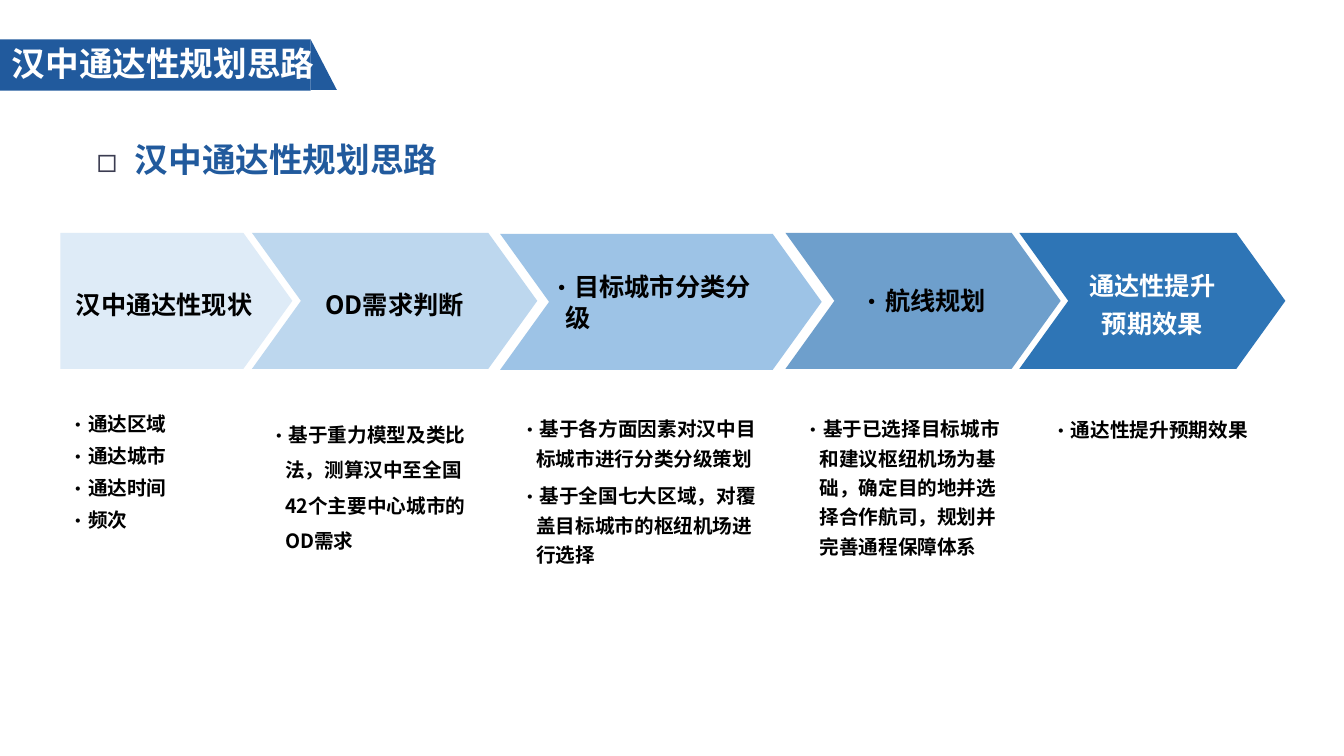
from lxml import etree
from pptx import Presentation
from pptx.dml.color import RGBColor
from pptx.enum.shapes import MSO_SHAPE
from pptx.enum.text import MSO_ANCHOR, MSO_AUTO_SIZE, PP_ALIGN
from pptx.oxml.ns import qn
from pptx.util import Inches, Pt

FONT = "Noto Sans CJK SC"
BLACK = RGBColor(0x00, 0x00, 0x00)
WHITE = RGBColor(0xFF, 0xFF, 0xFF)
NAVY = RGBColor(0x21, 0x5A, 0x9D)
BLUE = RGBColor(0x2E, 0x75, 0xB6)
SKY = RGBColor(0x9D, 0xC3, 0xE6)
PALE = RGBColor(0xBD, 0xD7, 0xEE)
FAINT = RGBColor(0xDE, 0xEB, 0xF7)
BULLET_GREY = "3B3C51"

LEFT, CENTER, JUSTIFY = PP_ALIGN.LEFT, PP_ALIGN.CENTER, PP_ALIGN.JUSTIFY
MIDDLE = MSO_ANCHOR.MIDDLE
GROW = MSO_AUTO_SIZE.SHAPE_TO_FIT_TEXT
RECTANGLE, TRIANGLE = MSO_SHAPE.RECTANGLE, MSO_SHAPE.RIGHT_TRIANGLE
PENTAGON, CHEVRON = MSO_SHAPE.PENTAGON, MSO_SHAPE.CHEVRON

deck = Presentation()
deck.slide_width, deck.slide_height = Inches(13.33), Inches(7.5)
page = deck.slides.add_slide(deck.slide_layouts[6])


def place(left, top, width, height):
    """Turn percentages of the slide's size into lengths."""
    across, down = deck.slide_width / 100, deck.slide_height / 100
    return [round(left * across), round(top * down), round(width * across), round(height * down)]


def write(frame, lines, size, color, bullet=None, indent=0.16, bullet_color=None, **formats):
    """Fill a text frame with one bold paragraph per line."""
    frame.word_wrap = True
    for number, line in enumerate(lines):
        para = frame.paragraphs[0] if number == 0 else frame.add_paragraph()
        if bullet:
            properties = para._p.get_or_add_pPr()
            properties.set("marL", str(Inches(indent)))
            properties.set("indent", str(-Inches(indent)))
            if bullet_color:
                tint = etree.SubElement(properties, qn("a:buClr"))
                etree.SubElement(tint, qn("a:srgbClr"), val=bullet_color)
            etree.SubElement(properties, qn("a:buFont"), typeface=FONT)
            etree.SubElement(properties, qn("a:buChar"), char=bullet)
        for name, value in formats.items():
            setattr(para, name, value)
        span = para.add_run()
        span.text = line
        for name, value in {"name": FONT, "size": Pt(size), "bold": True}.items():
            setattr(span.font, name, value)
        span.font.color.rgb = color
        etree.SubElement(span._r.get_or_add_rPr(), qn("a:ea"), typeface=FONT)


# Title band
for kind, area in ((RECTANGLE, (0, 5.2, 23.11, 6.8)), (TRIANGLE, (23.11, 5.2, 1.95, 6.67))):
    band = page.shapes.add_shape(kind, *place(*area))
    band.shadow.inherit = False
    band.fill.solid()
    band.fill.fore_color.rgb = NAVY
    band.line.fill.background()

# Headings
headings = (
    ((6.45, 15.07, 87.17, 8.53), NAVY,
     {"bullet": "◻", "indent": 0.38, "bullet_color": BULLET_GREY, "alignment": JUSTIFY,
      "line_spacing": 1.5, "space_after": Pt(6)}),
    ((0.15, 5.07, 30.91, 6.67), WHITE, {}),
)
for area, color, formats in headings:
    box = page.shapes.add_textbox(*place(*area))
    write(box.text_frame, ["汉中通达性规划思路"], 24, color, **formats)
    box.text_frame.auto_size = GROW

# Process arrows: kind, left, top, width, fill, opacity in percent, text colour, lines, formats
plain = {"alignment": CENTER, "line_spacing": 1.25}
dotted = {"bullet": "•", "space_after": Pt(6)}
stages = (
    (CHEVRON, 18.75, 30.8, 21.23, PALE, 100, BLACK, ["OD需求判断"], plain),
    (CHEVRON, 37.21, 30.93, 23.93, SKY, 100, BLACK, ["目标城市分类分级"],
     {**dotted, "alignment": LEFT}),
    (CHEVRON, 58.44, 30.8, 20.48, BLUE, 69, BLACK, ["航线规划"],
     {**dotted, "alignment": CENTER}),
    (PENTAGON, 4.5, 30.8, 17.25, FAINT, 100, BLACK, ["汉中通达性现状"], plain),
    (CHEVRON, 75.84, 30.8, 19.8, BLUE, 100, WHITE, ["通达性提升", "预期效果"], plain),
)
for kind, left, top, width, fill, opacity, color, lines, formats in stages:
    arrow = page.shapes.add_shape(kind, *place(left, top, width, 18))
    arrow.adjustments[0] = 0.36
    arrow.shadow.inherit = False
    arrow.fill.solid()
    arrow.fill.fore_color.rgb = fill
    arrow.line.fill.background()
    if opacity < 100:
        shade = arrow._element.spPr.find(qn("a:solidFill"))[0]
        etree.SubElement(shade, qn("a:alpha"), val=str(opacity * 1000))
    frame = arrow.text_frame
    frame.vertical_anchor = MIDDLE
    for side in ("left", "top", "right", "bottom"):
        setattr(frame, f"margin_{side}", 0)
    write(frame, lines, 18, color, **formats)

# Notes under the arrows: area, line spacing, lines
notes = (
    ((4.35, 53.87, 15.98, 36.53), 1.0, ["通达区域", "通达城市", "通达时间", "频次"]),
    ((37.96, 53.73, 19.2, 36.53), 1.25,
     ["基于各方面因素对汉中目标城市进行分类分级策划",
      "基于全国七大区域，对覆盖目标城市的枢纽机场进行选择"]),
    ((59.04, 53.73, 16.58, 40), 1.25,
     ["基于已选择目标城市和建议枢纽机场为基础，确定目的地并选择合作航司，规划并完善通程保障体系"]),
    ((77.49, 53.87, 16.58, 32.93), 1.25, ["通达性提升预期效果"]),
    ((19.28, 53.73, 17.25, 36.53), 1.5,
     ["基于重力模型及类比法，测算汉中至全国42个主要中心城市的OD需求"]),
)
for area, spacing, lines in notes:
    box = page.shapes.add_textbox(*place(*area))
    write(box.text_frame, lines, 14, BLACK, line_spacing=spacing, **dotted)

deck.save("out.pptx")
